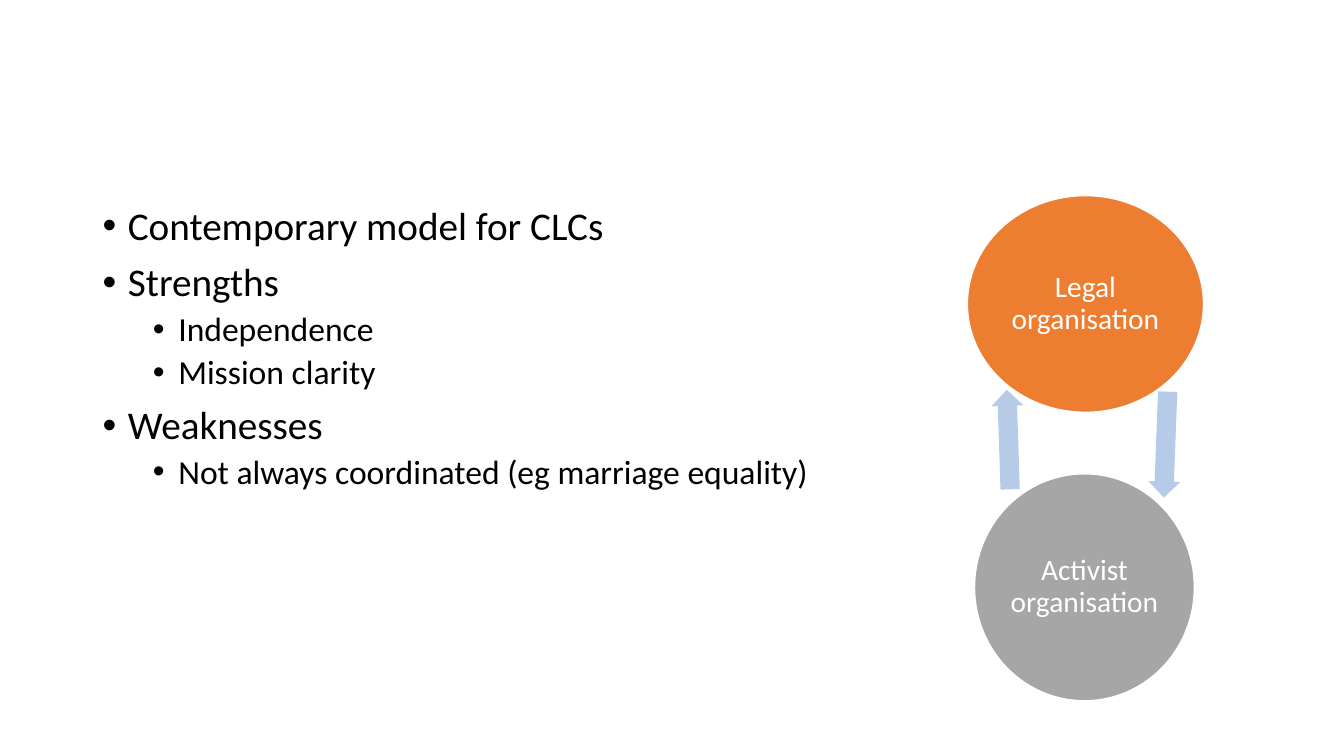
from dataclasses import dataclass

from lxml import etree
from pptx import Presentation
from pptx.dml.color import RGBColor
from pptx.enum.shapes import MSO_SHAPE
from pptx.enum.text import MSO_ANCHOR, MSO_AUTO_SIZE, PP_ALIGN
from pptx.oxml.ns import qn
from pptx.util import Cm, Pt

ELLIPSE = MSO_SHAPE.OVAL
ARROW = MSO_SHAPE.RIGHT_ARROW
MIDDLE = MSO_ANCHOR.MIDDLE
TOP = MSO_ANCHOR.TOP
CENTER = PP_ALIGN.CENTER
LEFT = PP_ALIGN.LEFT
NO_AUTOFIT = MSO_AUTO_SIZE.NONE
TITLE_AND_CONTENT = 1


@dataclass(frozen=True)
class Theme:
    """Colours, font and type sizes of the slide."""

    font: str = "Calibri"
    ink: RGBColor = RGBColor(0, 0, 0)
    white: RGBColor = RGBColor(255, 255, 255)
    legal: RGBColor = RGBColor(0xED, 0x7D, 0x31)
    activist: RGBColor = RGBColor(0xA6, 0xA6, 0xA6)
    arrow: RGBColor = RGBColor(0xB5, 0xCB, 0xE7)
    bullet_sizes: tuple = (28, 24)
    bullet_gaps: tuple = (10, 5)
    label_size: int = 21
    line_spacing: float = 0.9


THEME = Theme()

POINTS = [
    (0, "Contemporary model for CLCs"),
    (0, "Strengths"),
    (1, "Independence"),
    (1, "Mission clarity"),
    (0, "Weaknesses"),
    (1, "Not always coordinated (eg marriage equality)"),
]


def style_para(para, size, color, align):
    """Set the font, alignment and line spacing of a paragraph."""
    para.font.name = THEME.font
    para.font.size = Pt(size)
    para.font.color.rgb = color
    para.alignment = align
    para.line_spacing = THEME.line_spacing


def set_bullet(para, level):
    """Give a paragraph a round bullet and the hanging indent of its level."""
    props = para._p.get_or_add_pPr()
    props.set("marL", str(Cm(0.64 + 1.27 * level)))
    props.set("indent", str(Cm(-0.64)))
    font = etree.Element(qn("a:buFont"), typeface="Arial")
    bullet = etree.Element(qn("a:buChar"), char="•")
    defaults = props.find(qn("a:defRPr"))
    defaults.addprevious(font)
    defaults.addprevious(bullet)


def add_points(page, left, top, width, height):
    """Fill the body placeholder with the bulleted points."""
    body = page.placeholders[1]
    body.left, body.top = Cm(left), Cm(top)
    body.width, body.height = Cm(width), Cm(height)
    frame = body.text_frame
    frame.auto_size = NO_AUTOFIT
    frame.vertical_anchor = TOP
    frame.text = "\n".join(text for _, text in POINTS)
    for para, (level, _) in zip(frame.paragraphs, POINTS):
        para.level = level
        style_para(para, THEME.bullet_sizes[level], THEME.ink, LEFT)
        para.space_before = Pt(THEME.bullet_gaps[level])
        set_bullet(para, level)


def add_filled(page, kind, box, color):
    """Add a flat preset shape in one colour."""
    shape = page.shapes.add_shape(kind, *(Cm(length) for length in box))
    shape.shadow.inherit = False
    shape.fill.solid()
    shape.fill.fore_color.rgb = color
    return shape


def add_organisation(page, box, text, color):
    """Add a circle labelled with the kind of organisation."""
    circle = add_filled(page, ELLIPSE, box, color)
    circle.line.color.rgb = THEME.white
    circle.line.width = Pt(1)
    frame = circle.text_frame
    frame.word_wrap = True
    frame.vertical_anchor = MIDDLE
    frame.margin_left = frame.margin_right = Cm(0.07)
    frame.margin_top = frame.margin_bottom = Cm(0.07)
    frame.text = text
    style_para(frame.paragraphs[0], THEME.label_size, THEME.white, CENTER)


def add_arrow(page, box, rotation):
    """Add a block arrow turned by the given degrees."""
    arrow = add_filled(page, ARROW, box, THEME.arrow)
    arrow.line.fill.background()
    arrow.adjustments[0] = 0.6
    arrow.adjustments[1] = 0.5
    arrow.rotation = rotation


def add_cycle(page, left, top):
    """Draw the two organisations and the arrows that link them."""
    add_organisation(page, (left + 0.22, top, 5.95, 5.46), "Legal organisation", THEME.legal)
    add_arrow(page, (left + 3.88, top + 5.87, 2.67, 0.81), 92.1)
    add_organisation(page, (left + 0.4, top + 7.01, 5.54, 5.72), "Activist organisation", THEME.activist)
    add_arrow(page, (left, top + 5.74, 2.51, 0.81), 268.1)


def main():
    """Build the deck and save it."""
    deck = Presentation()
    deck.slide_width, deck.slide_height = Cm(33.87), Cm(19.05)
    page = deck.slides.add_slide(deck.slide_layouts[TITLE_AND_CONTENT])
    title = page.shapes.title.element
    title.getparent().remove(title)
    add_points(page, 2.33, 5.08, 29.21, 12.09)
    add_cycle(page, 24.16, 4.93)
    deck.save("out.pptx")


if __name__ == "__main__":
    main()
